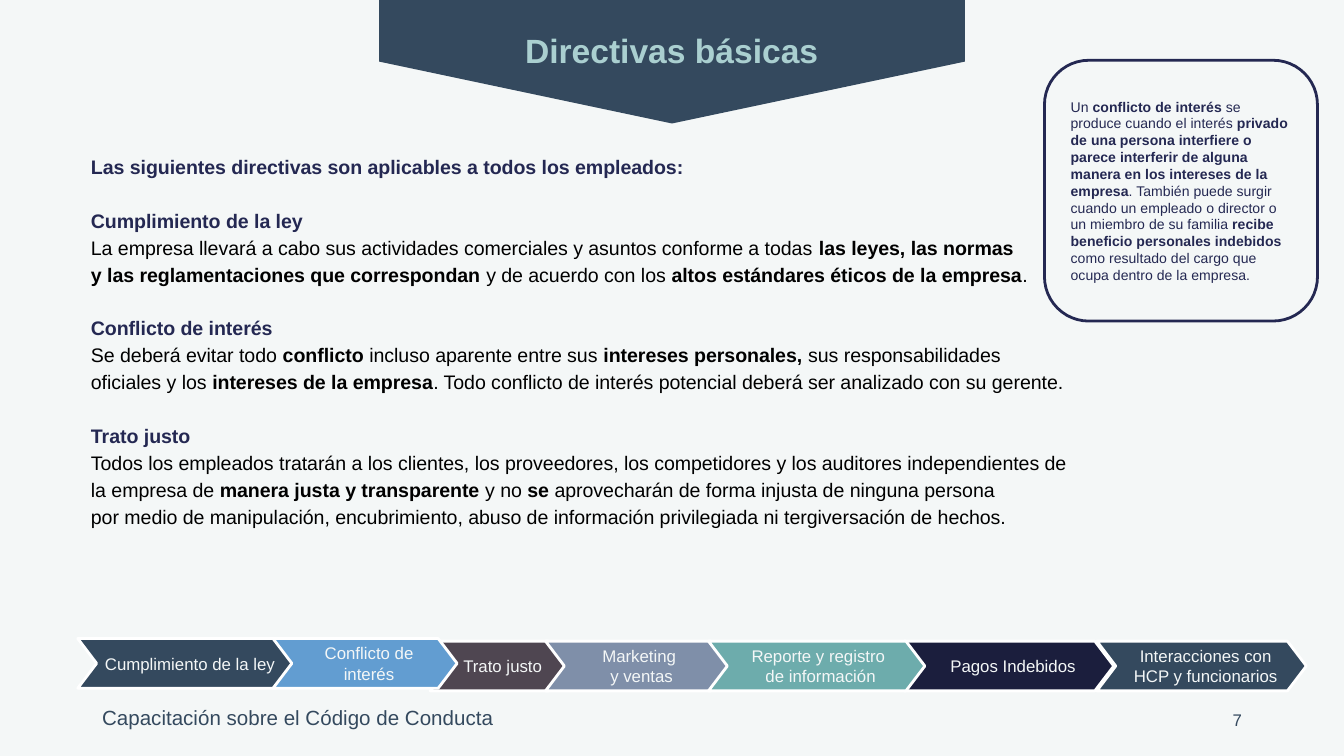
from copy import deepcopy

from pptx import Presentation
from pptx.dml.color import RGBColor
from pptx.enum.shapes import MSO_SHAPE
from pptx.enum.text import MSO_ANCHOR, PP_ALIGN
from pptx.util import Cm, Pt

COLOURS = {
    "background": "F4F7F7", "slate": "34495E", "aqua": "AACFD0", "navy": "242852",
    "black": "000000", "white": "FFFFFF", "plum": "4F4651", "midnight": "1B1E3D",
    "grey_blue": "7F8FA9", "teal": "6DACAC", "sky": "629DD1",
}
FONT = "Arial"
SMALL_INSETS = (0.18, 0.1, 0.18, 0.1)
WIDE_INSETS = (0.25, 0.25, 0.25, 0.25)
CHEVRON_INSETS = (0.15, 0, 0, 0)

INTRO = "Las siguientes directivas son aplicables a todos los empleados:"
# Heading and body; ** switches bold on and off.
DIRECTIVES = [
    ("Cumplimiento de la ley",
     "La empresa llevará a cabo sus actividades comerciales y asuntos conforme a todas "
     "**las leyes, las normas \ny las reglamentaciones que correspondan** y de acuerdo con los "
     "**altos estándares éticos de la empresa**."),
    ("Conflicto de interés",
     "Se deberá evitar todo **conflicto** incluso aparente entre sus **intereses personales,** "
     "sus responsabilidades oficiales y los **intereses de la empresa**. Todo conflicto de "
     "interés potencial deberá ser analizado con su gerente."),
    ("Trato justo",
     "Todos los empleados tratarán a los clientes, los proveedores, los competidores y los "
     "auditores independientes de la empresa de **manera justa y transparente **y no **se **"
     "aprovecharán de forma injusta de ninguna persona \npor medio de manipulación, "
     "encubrimiento, abuso de información privilegiada ni tergiversación de hechos."),
]
DEFINITION = (
    "Un **conflicto de interés** se produce cuando el interés **privado de una persona "
    "interfiere o parece interferir de alguna manera en los intereses de la empresa**. También "
    "puede surgir cuando un empleado o director o un miembro de su familia **recibe beneficio "
    "personales indebidos** como resultado del cargo que ocupa dentro de la empresa."
)
# Text, left, top, width, fill; from back to front.
CHEVRONS = [
    ("Trato justo", 8.13, 12.12, 2.59, "plum"),
    ("Pagos Indebidos", 17.09, 12.12, 3.96, "midnight"),
    ("Marketing \ny ventas", 10.31, 12.12, 3.48, "grey_blue"),
    ("Reporte y registro \nde información", 13.39, 12.12, 4.09, "teal"),
    ("Cumplimiento de la ley", 1.47, 12.07, 4.09, "slate"),
    ("Conflicto de interés", 5.16, 12.07, 3.48, "sky"),
    ("Interacciones con HCP y funcionarios", 20.73, 12.12, 3.96, "slate"),
]


def colour(name):
    return RGBColor.from_string(COLOURS[name])


def write(para, text, size, ink, bold=False, align=PP_ALIGN.LEFT, spacing=1.0, before=0):
    """Fill a paragraph; ** toggles bold and a newline breaks the line."""
    para.alignment = align
    para.line_spacing = spacing
    para.space_before = Pt(before)
    for index, part in enumerate(text.split("**")):
        for number, line in enumerate(part.split("\n")):
            if number:
                para.add_line_break()
                para._p[-1].append(deepcopy(span._r.rPr))
            span = para.add_run()
            span.text = line
            span.font.name = FONT
            span.font.size = Pt(size)
            span.font.bold = bold != bool(index % 2)
            span.font.color.rgb = colour(ink)


def set_frame(shape, insets, anchor=MSO_ANCHOR.TOP):
    frame = shape.text_frame
    frame.word_wrap = True
    frame.vertical_anchor = anchor
    (frame.margin_left, frame.margin_top,
     frame.margin_right, frame.margin_bottom) = map(Cm, insets)
    return frame


def add_text_box(slide, place, insets=SMALL_INSETS, anchor=MSO_ANCHOR.TOP):
    return set_frame(slide.shapes.add_textbox(*map(Cm, place)), insets, anchor)


def add_block(slide, kind, place, adjustment, fill=None, line=None):
    block = slide.shapes.add_shape(kind, *map(Cm, place))
    block.shadow.inherit = False
    block.adjustments[0] = adjustment
    if fill:
        block.fill.solid()
        block.fill.fore_color.rgb = colour(fill)
    else:
        block.fill.background()
    if line:
        block.line.color.rgb = colour(line)
        block.line.width = Pt(1.5)
    else:
        block.line.fill.background()
    return block


def add_title(slide):
    banner = add_block(slide, MSO_SHAPE.PENTAGON, (11.53, -4.37, 2.34, 11.07), 0.5, "slate")
    banner.rotation = 90
    frame = add_text_box(slide, (5.66, 0.46, 14.07, 0.97))
    write(frame.paragraphs[0], "Directivas básicas", 18, "aqua", bold=True,
          align=PP_ALIGN.CENTER)


def add_footer(slide):
    frame = add_text_box(slide, (1.75, 13.23, 8.97, 0.64))
    write(frame.paragraphs[0], "Capacitación sobre el Código de Conducta", 11, "slate")
    frame = add_text_box(slide, (17.93, 13.23, 5.72, 0.76), anchor=MSO_ANCHOR.MIDDLE)
    write(frame.paragraphs[0], "7", 9, "slate", align=PP_ALIGN.RIGHT)


def add_chevron(slide, text, left, top, width, fill):
    block = add_block(slide, MSO_SHAPE.CHEVRON, (left, top, width, 0.94), 0.38, fill, "white")
    frame = set_frame(block, CHEVRON_INSETS, MSO_ANCHOR.MIDDLE)
    write(frame.paragraphs[0], text, 9, "background", align=PP_ALIGN.CENTER)


def add_directives(slide):
    frame = add_text_box(slide, (1.47, 2.72, 19, 8.94), WIDE_INSETS)
    write(frame.paragraphs[0], INTRO, 10.5, "navy", bold=True, spacing=0.9)
    for heading, body in DIRECTIVES:
        write(frame.add_paragraph(), heading, 10.5, "navy", bold=True, spacing=1.15, before=14.4)
        write(frame.add_paragraph(), body, 10.5, "black", spacing=1.15)


def add_definition(slide):
    block = add_block(slide, MSO_SHAPE.ROUNDED_RECTANGLE, (19.74, 1.14, 5.16, 4.93), 0.17,
                      line="navy")
    frame = set_frame(block, WIDE_INSETS, MSO_ANCHOR.MIDDLE)
    write(frame.paragraphs[0], DEFINITION, 7.5, "navy")


def main():
    deck = Presentation()
    deck.slide_width, deck.slide_height = Cm(25.4), Cm(14.29)
    page = deck.slides.add_slide(deck.slide_layouts[6])
    page.background.fill.solid()
    page.background.fill.fore_color.rgb = colour("background")
    add_title(page)
    add_footer(page)
    for chevron in CHEVRONS:
        add_chevron(page, *chevron)
    add_directives(page)
    add_definition(page)
    deck.save("out.pptx")


if __name__ == "__main__":
    main()
